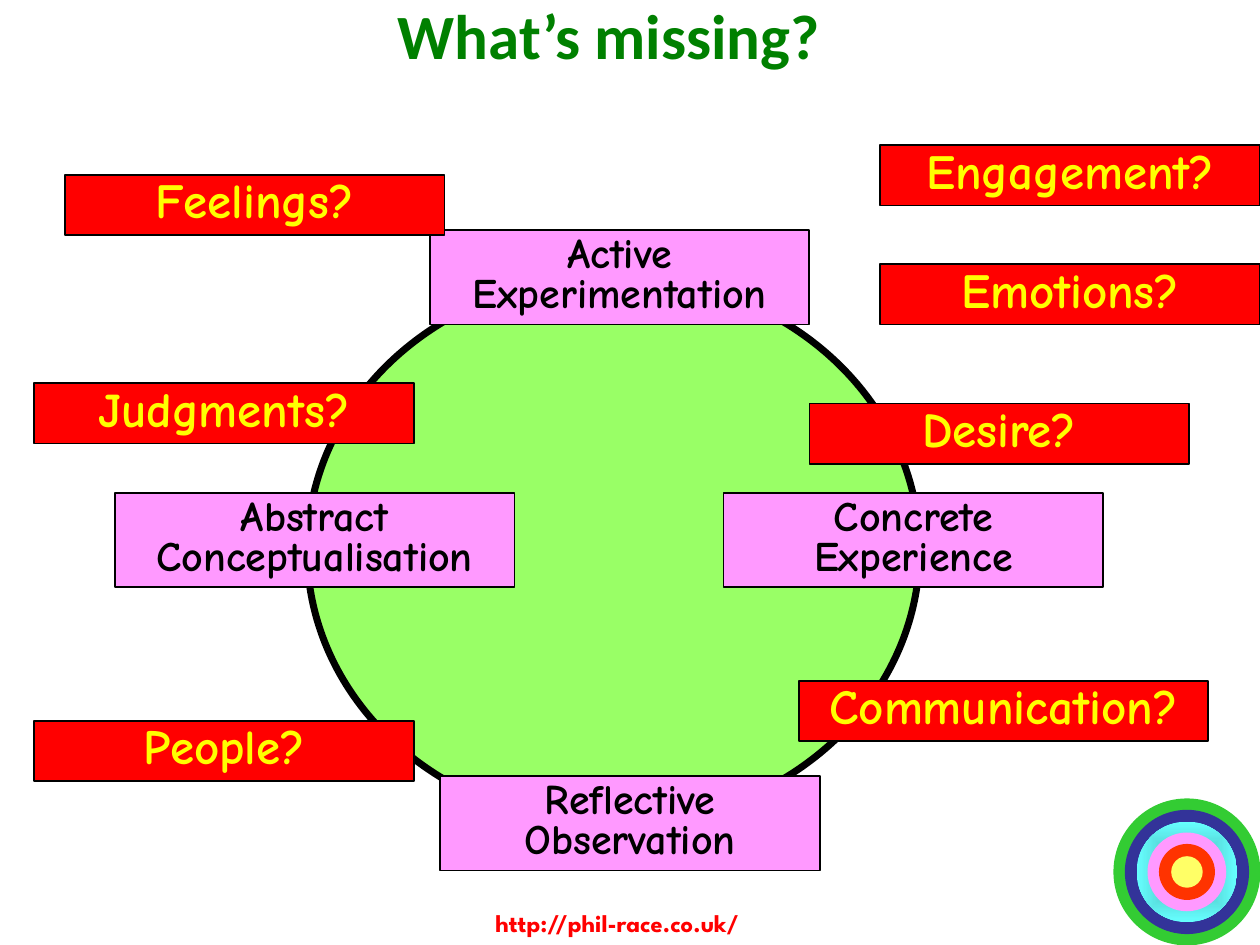
import pptx
import pptx.util
import pptx.dml.color
import pptx.enum.shapes
import pptx.enum.text
import pptx.oxml
import pptx.oxml.ns

Pt = pptx.util.Pt
SHAPES = pptx.enum.shapes.MSO_SHAPE
ANCHOR = pptx.enum.text.MSO_ANCHOR
ALIGN = pptx.enum.text.PP_ALIGN

COLOURS = {
    "black": "000000", "cycle": "99FF66", "stage": "FF99FF",
    "question": "FF0000", "yellow": "FFFF00", "title": "008000",
    "green": "33CC33", "navy": "333399", "teal": "47B2B2",
    "aqua": "66FFFF", "orange": "FF3300", "lemon": "FFFF66",
}

# Left, top, width and lines of each learning stage
STAGES = [
    (245.5, 131.5, 217, ["Active", "Experimentation"]),
    (413.5, 281.5, 217, ["Concrete", "Experience"]),
    (251.5, 443.5, 217, ["Reflective", "Observation"]),
    (65.5, 281.5, 228.5, ["Abstract", "Conceptualisation"]),
]
# Left, top, width and wording of each missing element
QUESTIONS = [
    (37, 100, 217, "Feelings?"),
    (503, 151, 217, "Emotions?"),
    (19.5, 412, 217, "People?"),
    (456.5, 389, 234, "Communication?"),
    (19.5, 219, 217, "Judgments?"),
    (462.5, 230.5, 217, "Desire?"),
    (503, 83, 217, "Engagement?"),
]
RING_CENTRE = (678.25, 498.25)
RINGS = [(84, "green"), (71, "navy"), (57.5, "aqua"),
         (45, "stage"), (32, "orange"), (18, "lemon")]


def rgb(name):
    return pptx.dml.color.RGBColor.from_string(COLOURS[name])


def write(frame, lines, size, font, colour, align=ALIGN.CENTER,
          spacing=None, anchor=ANCHOR.TOP):
    frame.word_wrap = True
    frame.vertical_anchor = anchor
    for index, line in enumerate(lines):
        paragraph = frame.add_paragraph() if index else frame.paragraphs[0]
        paragraph.alignment = align
        paragraph.line_spacing = spacing
        run = paragraph.add_run()
        run.text = line
        run.font.size = Pt(size)
        run.font.name = font
        run.font.bold = True
        run.font.color.rgb = rgb(colour)


def add_figure(slide, preset, box, fill, line_width=0):
    figure = slide.shapes.add_shape(preset, *map(Pt, box))
    figure.shadow.inherit = False
    figure.fill.solid()
    figure.fill.fore_color.rgb = rgb(fill)
    if line_width:
        figure.line.color.rgb = rgb("black")
        figure.line.width = Pt(line_width)
    else:
        figure.line.fill.background()
    return figure


def add_label(slide, box, fill, lines, size, colour):
    label = add_figure(slide, SHAPES.RECTANGLE, box, fill, line_width=1)
    write(label.text_frame, lines, size, "Comic Neue", colour, spacing=0.8)


def add_text(slide, box, text, **style):
    frame = slide.shapes.add_textbox(*map(Pt, box)).text_frame
    write(frame, [text], **style)


def shade_from_centre(figure, inner, outer):
    figure.fill.gradient()
    for stop, colour in zip(figure.fill.gradient_stops, (inner, outer)):
        stop.color.rgb = rgb(colour)
    qn = pptx.oxml.ns.qn
    gradient = figure._element.spPr.find(qn("a:gradFill"))
    gradient.replace(gradient.find(qn("a:lin")), pptx.oxml.parse_xml(
        '<a:path %s path="shape"><a:fillToRect l="50000" t="50000" '
        'r="50000" b="50000"/></a:path>' % pptx.oxml.ns.nsdecls("a")))


def add_rings(slide):
    centre_x, centre_y = RING_CENTRE
    for diameter, colour in RINGS:
        box = (centre_x - diameter / 2, centre_y - diameter / 2,
               diameter, diameter)
        ring = add_figure(slide, SHAPES.OVAL, box, colour)
        if colour == "aqua":
            shade_from_centre(ring, "teal", "aqua")


def main():
    deck = pptx.Presentation()
    deck.slide_width, deck.slide_height = Pt(720), Pt(540)
    slide = deck.slides.add_slide(deck.slide_layouts[6])

    # Corner rings, web address and title
    add_rings(slide)
    add_text(slide, (276, 515.5, 208, 24.5), "http://phil-race.co.uk/", size=14,
             font="League Spartan", colour="question", align=ALIGN.LEFT)
    add_text(slide, (42.5, -19.5, 611, 85.5), "What’s missing?", size=36,
             font="Calibri", colour="title", spacing=0.85,
             anchor=ANCHOR.MIDDLE)

    # Learning cycle with its four stages
    add_figure(slide, SHAPES.OVAL, (175.5, 157.5, 350, 314), "cycle",
               line_width=4)
    for left, top, width, lines in STAGES:
        add_label(slide, (left, top, width, 54), "stage", lines, 24, "black")

    # What the cycle leaves out
    for left, top, width, wording in QUESTIONS:
        add_label(slide, (left, top, width, 34.5), "question", [wording],
                  28, "yellow")

    deck.save("out.pptx")


main()
